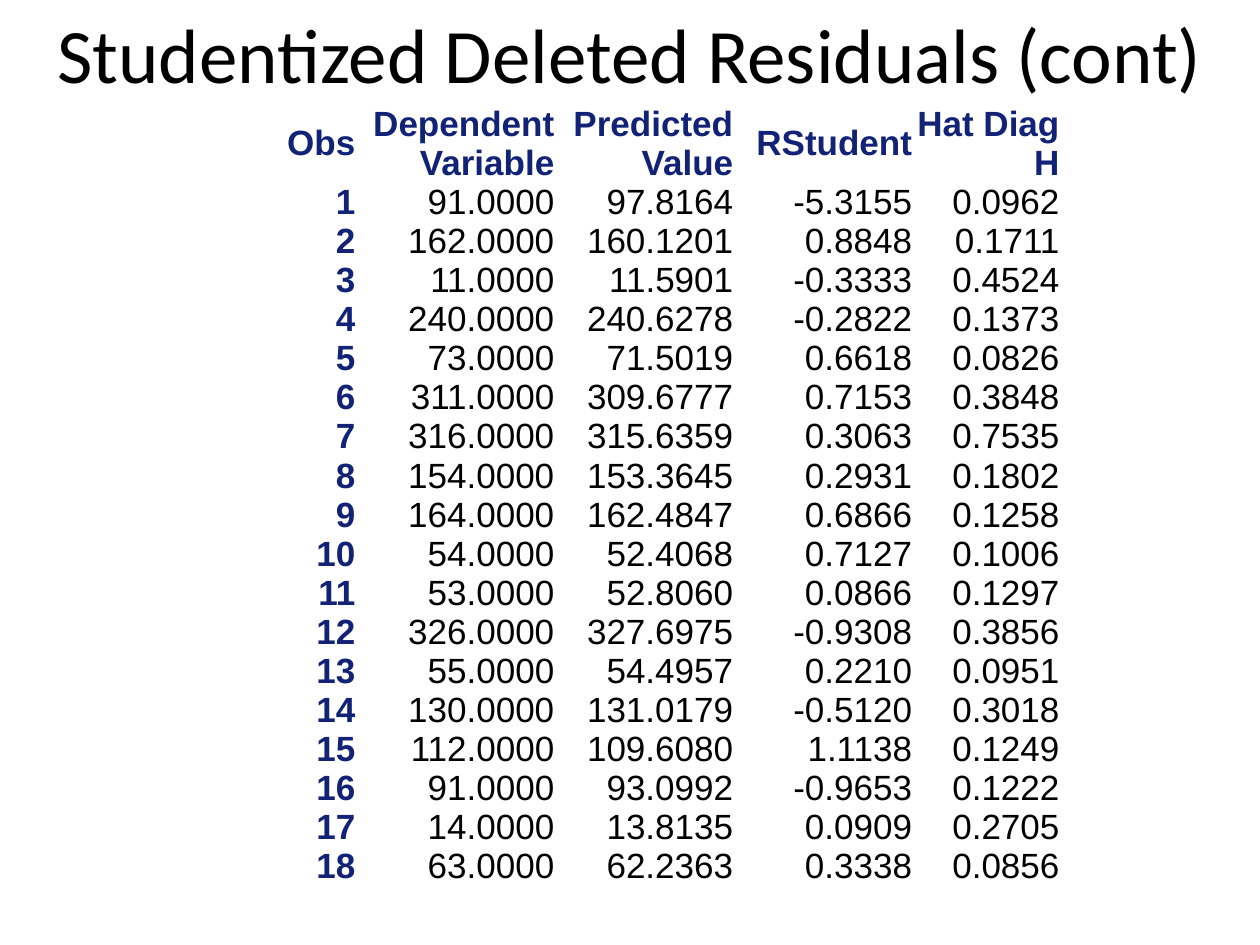
from pptx import Presentation
from pptx.dml.color import RGBColor
from pptx.enum.text import MSO_ANCHOR, PP_ALIGN
from pptx.util import Inches, Pt

BLACK = "000000"
NAVY = "112277"
HEADERS = ["Obs", "Dependent\vVariable", "Predicted\vValue", "RStudent", "Hat Diag\vH"]
COLUMN_WIDTHS = [0.58, 1.58, 1.42, 1.42, 1.17]
HEADER_HEIGHT = 0.27
ROW_HEIGHT = 0.23
OBSERVATIONS = [
    ("91.0000", "97.8164", "-5.3155", "0.0962"),
    ("162.0000", "160.1201", "0.8848", "0.1711"),
    ("11.0000", "11.5901", "-0.3333", "0.4524"),
    ("240.0000", "240.6278", "-0.2822", "0.1373"),
    ("73.0000", "71.5019", "0.6618", "0.0826"),
    ("311.0000", "309.6777", "0.7153", "0.3848"),
    ("316.0000", "315.6359", "0.3063", "0.7535"),
    ("154.0000", "153.3645", "0.2931", "0.1802"),
    ("164.0000", "162.4847", "0.6866", "0.1258"),
    ("54.0000", "52.4068", "0.7127", "0.1006"),
    ("53.0000", "52.8060", "0.0866", "0.1297"),
    ("326.0000", "327.6975", "-0.9308", "0.3856"),
    ("55.0000", "54.4957", "0.2210", "0.0951"),
    ("130.0000", "131.0179", "-0.5120", "0.3018"),
    ("112.0000", "109.6080", "1.1138", "0.1249"),
    ("91.0000", "93.0992", "-0.9653", "0.1222"),
    ("14.0000", "13.8135", "0.0909", "0.2705"),
    ("63.0000", "62.2363", "0.3338", "0.0856"),
]


def color(hex_string):
    """Return the colour for a hex string."""
    return RGBColor.from_string(hex_string)


def format_paragraph(paragraph, alignment, font_name, size, hex_color, bold=False):
    """Align a paragraph and format all its runs."""
    paragraph.alignment = alignment
    for run in paragraph.runs:
        run.font.name = font_name
        run.font.size = Pt(size)
        run.font.bold = bold
        run.font.color.rgb = color(hex_color)


def place_title(slide, text, left, top, width, height):
    """Move the title placeholder to its box and fill it."""
    title = slide.shapes.title
    title.left, title.top = Inches(left), Inches(top)
    title.width, title.height = Inches(width), Inches(height)
    text_frame = title.text_frame
    text_frame.text = text
    text_frame.word_wrap = True
    text_frame.vertical_anchor = MSO_ANCHOR.MIDDLE
    format_paragraph(text_frame.paragraphs[0], PP_ALIGN.CENTER, "Calibri", 44, BLACK)


def fill_cell(cell, text, is_heading):
    """Write one right-aligned cell without a fill."""
    cell.text = text
    cell.fill.background()
    cell.vertical_anchor = MSO_ANCHOR.MIDDLE
    cell.margin_left = cell.margin_right = Inches(0.01)
    cell.margin_top = cell.margin_bottom = Inches(0)
    format_paragraph(cell.text_frame.paragraphs[0], PP_ALIGN.RIGHT, "Arial", 20,
                     NAVY if is_heading else BLACK, is_heading)


def place_residual_table(slide, left, top, width, height):
    """Add the table of observations in its box."""
    rows = [HEADERS] + [(str(number), *values)
                        for number, values in enumerate(OBSERVATIONS, start=1)]
    frame = slide.shapes.add_table(len(rows), len(HEADERS), Inches(left), Inches(top),
                                   Inches(width), Inches(height))
    table = frame.table
    table.first_row = table.horz_banding = False
    for column, column_width in zip(table.columns, COLUMN_WIDTHS):
        column.width = Inches(column_width)
    for row_index, values in enumerate(rows):
        table.rows[row_index].height = Inches(ROW_HEIGHT if row_index else HEADER_HEIGHT)
        for column_index, text in enumerate(values):
            is_heading = row_index == 0 or column_index == 0
            fill_cell(table.cell(row_index, column_index), text, is_heading)
    frame.height = Inches(height)


def main():
    """Build and save the presentation."""
    presentation = Presentation()
    presentation.slide_width, presentation.slide_height = Inches(10), Inches(7.5)
    slide = presentation.slides.add_slide(presentation.slide_layouts[5])
    place_title(slide, "Studentized Deleted Residuals (cont)", 0, 0, 10, 0.83)
    place_residual_table(slide, 2.25, 0.83, sum(COLUMN_WIDTHS), 6.67)
    presentation.save("out.pptx")


if __name__ == "__main__":
    main()
